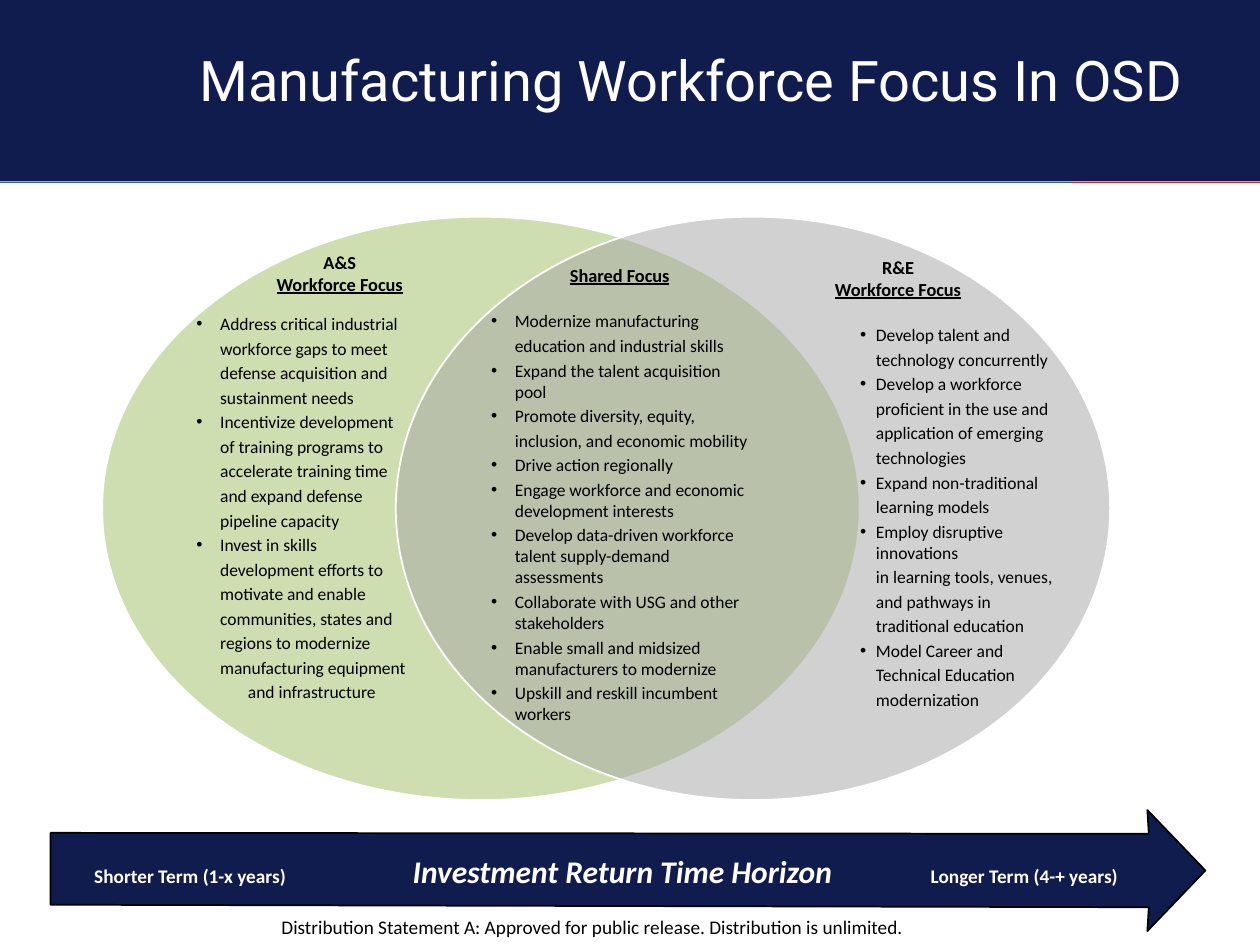
from lxml import etree
from pptx import Presentation
from pptx.dml.color import RGBColor
from pptx.enum.shapes import MSO_CONNECTOR, MSO_SHAPE
from pptx.enum.text import MSO_ANCHOR, MSO_AUTO_SIZE, PP_ALIGN
from pptx.oxml.ns import qn
from pptx.util import Cm, Pt

RECT, OVAL, LINE = MSO_SHAPE.RECTANGLE, MSO_SHAPE.OVAL, MSO_CONNECTOR.STRAIGHT
TOP, MIDDLE, BOTTOM = MSO_ANCHOR.TOP, MSO_ANCHOR.MIDDLE, MSO_ANCHOR.BOTTOM
LEFT, CENTER = PP_ALIGN.LEFT, PP_ALIGN.CENTER
FIXED = MSO_AUTO_SIZE.NONE
NAVY, WHITE, BLACK = "111C4E", "FFFFFF", "000000"

# Each item is one bullet; its further lines are indented, a tab goes deeper.
AS_ITEMS = [
    "Address critical industrial\nworkforce gaps to meet\ndefense acquisition and\nsustainment needs",
    "Incentivize development\nof training programs to\naccelerate training time\n"
    "and expand defense\npipeline capacity",
    "Invest in skills\ndevelopment efforts to\nmotivate and enable\ncommunities, states and\n"
    "regions to modernize\nmanufacturing equipment\n\tand infrastructure",
]
RE_ITEMS = [
    "Develop talent and\ntechnology concurrently",
    "Develop a workforce\nproficient in the use and\napplication of emerging\ntechnologies",
    "Expand non-traditional\nlearning models",
    "Employ disruptive innovations\nin learning tools, venues,\nand pathways in\ntraditional education",
    "Model Career and\nTechnical Education\nmodernization",
]
SHARED_ITEMS = [
    "Modernize manufacturing\neducation and industrial skills",
    "Expand the talent acquisition pool",
    "Promote diversity, equity,\ninclusion, and economic mobility",
    "Drive action regionally",
    "Engage workforce and economic development interests",
    "Develop data-driven workforce talent supply-demand assessments",
    "Collaborate with USG and other stakeholders",
    "Enable small and midsized manufacturers to modernize",
    "Upskill and reskill incumbent workers",
]


def color(code):
    return RGBColor.from_string(code)


def add(parent, tag, **attrs):
    node = etree.SubElement(parent, qn(tag))
    for key, value in attrs.items():
        node.set(key, str(value))
    return node


def style(font, size, code=BLACK, name="Calibri", bold=False):
    font.size, font.name, font.bold = Pt(size), name, bold
    font.color.rgb = color(code)


def paint(shape, fill, edge=None):
    shape.shadow.inherit = False
    shape.fill.solid()
    shape.fill.fore_color.rgb = color(fill)
    if edge:
        shape.line.color.rgb = color(edge)
        shape.line.width = Pt(1)
    else:
        shape.line.fill.background()


def indent(para, margin, hang=0):
    """Set the left margin, with a hanging bullet if hang is given."""
    props = para._p.get_or_add_pPr()
    props.set("marL", str(Cm(margin)))
    props.set("indent", str(-Cm(hang)))
    if hang:
        add(props, "a:buFont", typeface="Arial")
        add(props, "a:buChar", char="•")


def text_box(slide, box, anchor):
    frame = slide.shapes.add_textbox(*map(Cm, box)).text_frame
    frame.word_wrap, frame.vertical_anchor = True, anchor
    return frame


def header(slide, x, y, w, h):
    band = slide.shapes.add_shape(RECT, Cm(x), Cm(y), Cm(w), Cm(h))
    paint(band, NAVY)
    split, rule = x + 0.85 * w, y + h + 0.02
    for start, end, code in ((x, split, "265CAA"), (x + w, split, "E21E26")):
        line = slide.shapes.add_connector(LINE, Cm(start), Cm(rule), Cm(end), Cm(rule))
        line.line.color.rgb = color(code)
        line.line.width = Pt(1)
        add(line._element.spPr, "a:effectLst")

    title = slide.shapes.title
    slide.shapes._spTree.append(title._element)  # bring in front of the band
    title.left, title.top = Cm(x + 3.76), Cm(y + 0.75)
    title.width, title.height = Cm(w - 3.76), Cm(1.88)
    frame = title.text_frame
    frame.text = "Manufacturing Workforce Focus In OSD"
    frame.auto_size, frame.vertical_anchor = FIXED, MIDDLE
    para = frame.paragraphs[0]
    para.alignment, para.line_spacing = LEFT, 0.9
    style(para.runs[0].font, 32, WHITE, "Roboto")


def venn(slide, x, y, w, h):
    group = slide.shapes.add_group_shape()
    left_w, right_w = 15.27, 14.4
    left = group.shapes.add_shape(OVAL, Cm(x), Cm(y), Cm(left_w), Cm(h))
    paint(left, "CFDEB1", WHITE)
    right = group.shapes.add_shape(OVAL, Cm(x + w - right_w), Cm(y), Cm(right_w), Cm(h))
    paint(right, "A5A5A5", WHITE)
    tint = right._element.spPr.find(qn("a:solidFill"))[0]
    add(tint, "a:alpha", val=50000)


def focus(slide, box, heads, items, gap, base=0, hang=0.48, shift=0, anchor=TOP):
    """Place centred headings over a bulleted list that starts at base."""
    frame = text_box(slide, box, anchor)
    for i, head in enumerate(heads):
        para = frame.paragraphs[0] if i == 0 else frame.add_paragraph()
        para.text, para.alignment = head, CENTER
        indent(para, shift)
        font = para.runs[0].font
        style(font, 10.5, bold=True)
        font.underline = head == heads[-1]
    for i, item in enumerate(items):
        for j, line in enumerate(item.split("\n")):
            para = frame.add_paragraph()
            para.text = line.strip()
            deep = 0.56 if line.startswith("\t") else 0
            indent(para, base + hang + deep, hang if j == 0 else 0)
            para.alignment = LEFT
            para.space_before = Pt(gap if i + j == 0 else 2)
            style(para.runs[0].font, 10)


def arrow(slide, x, y, w, h):
    neck, low, high = x + w - 1.14, y + 0.48, y + h - 0.5
    dots = [(x, low - 0.02), (neck, low), (neck - 0.03, y), (x + w, y + h / 2),
            (neck - 0.03, y + h), (neck, high + 0.02), (x, high - 0.03)]
    start, *rest = [(Cm(a), Cm(b)) for a, b in dots]
    pen = slide.shapes.build_freeform(*start)
    pen.add_line_segments(rest, close=True)
    shape = pen.convert_to_shape()
    paint(shape, NAVY, BLACK)
    frame = shape.text_frame
    frame.word_wrap, frame.vertical_anchor = True, MIDDLE
    frame.margin_left = Cm(0.88)
    para = frame.paragraphs[0]
    para.alignment = LEFT
    tabs = add(para._p.get_or_add_pPr(), "a:tabLst")
    for pos, side in ((10.65, "ctr"), (20.64, "r")):
        add(tabs, "a:tab", pos=Cm(pos), algn=side)
    for text, size in (("Shorter Term (1-x years)\t", 11),
                       ("Investment Return Time Horizon", 18),
                       ("\tLonger Term (4-+ years)", 11)):
        run = para.add_run()
        run.text = text
        style(run.font, size, WHITE, bold=True)
        run.font.italic = size == 18


def footer(slide, *box):
    frame = text_box(slide, box, BOTTOM)
    frame.text = ("Distribution Statement A: Approved for public release. "
                  "Distribution is unlimited.")
    para = frame.paragraphs[0]
    para.alignment = CENTER
    style(para.runs[0].font, 11)


def main():
    deck = Presentation()
    deck.slide_width, deck.slide_height = Cm(25.4), Cm(19.05)
    slide = deck.slides.add_slide(deck.slide_layouts[5])
    header(slide, 0, 0, 25.4, 3.66)
    venn(slide, 2.06, 4.37, 20.32, 11.76)
    focus(slide, (3.71, 4.93, 5.16, 9.42), ["A&S", "Workforce Focus"], AS_ITEMS,
          gap=10.5, shift=1.12)
    focus(slide, (14.55, 5.03, 7.11, 9.5), ["R&E", "Workforce Focus"], RE_ITEMS,
          gap=14, base=2.54, hang=0.32)
    focus(slide, (9.65, 5.26, 5.69, 9.4), ["Shared Focus"], SHARED_ITEMS,
          gap=14, anchor=MIDDLE)
    arrow(slide, 1.02, 16.33, 23.28, 2.44)
    footer(slide, 1.91, 18.31, 20.07, 0.74)
    deck.save("out.pptx")


if __name__ == "__main__":
    main()
